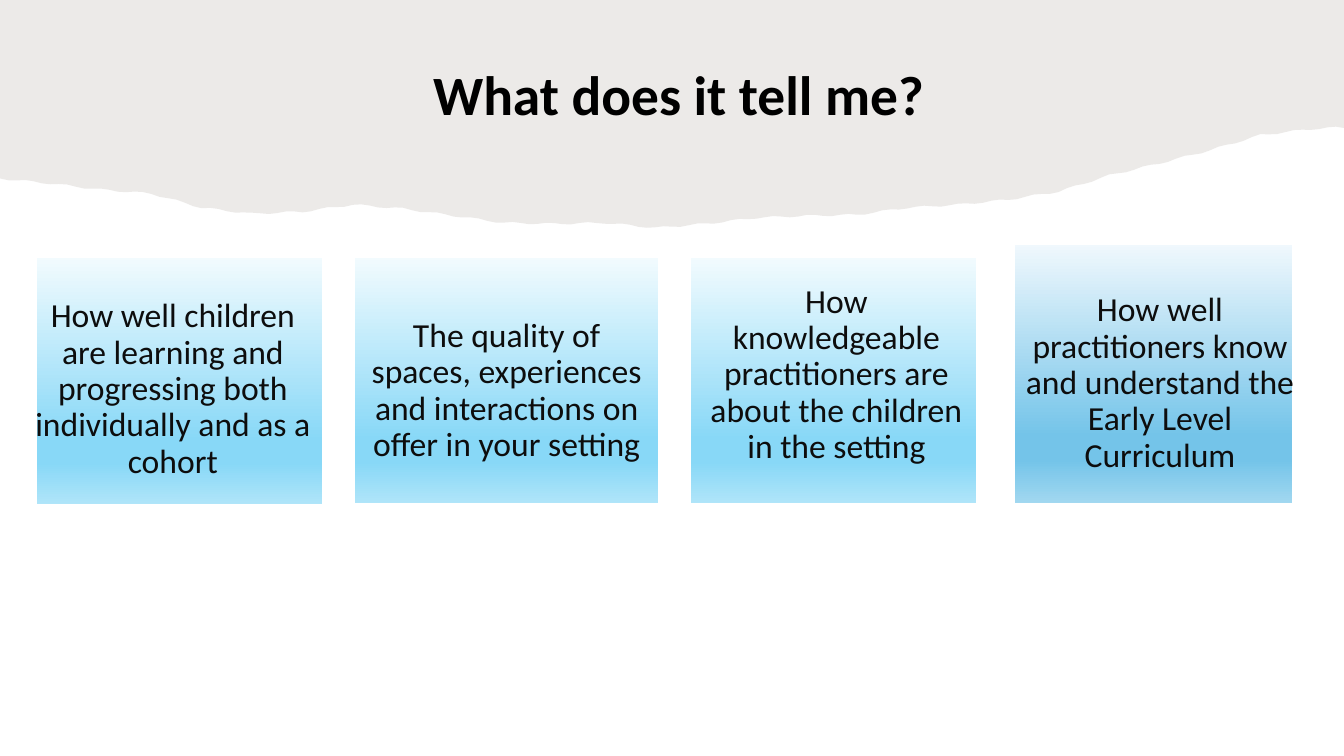
import math

import pptx
import pptx.util
import pptx.dml.color
import pptx.enum.shapes
import pptx.enum.text
import pptx.oxml.ns
from lxml import etree

Inches = pptx.util.Inches
Pt = pptx.util.Pt
RGBColor = pptx.dml.color.RGBColor
ANCHOR = pptx.enum.text.MSO_ANCHOR
qn = pptx.oxml.ns.qn

TAUPE = RGBColor(0x82, 0x76, 0x6A)
BLACK = RGBColor(0x00, 0x00, 0x00)
INK = RGBColor(0x0D, 0x0D, 0x0D)
WHITE = RGBColor(0xFF, 0xFF, 0xFF)
SKY_TOP = RGBColor(0xF2, 0xFB, 0xFE)
SKY_MIDDLE = RGBColor(0x88, 0xD8, 0xF7)
SKY_BOTTOM = RGBColor(0xB0, 0xE5, 0xF9)
BLUE_TOP = RGBColor(0xF0, 0xF8, 0xFD)
BLUE_MIDDLE = RGBColor(0x74, 0xC4, 0xE9)
BLUE_BOTTOM = RGBColor(0xA2, 0xD8, 0xF0)

SLIDE_WIDTH = 13.33
SLIDE_HEIGHT = 7.5


def add_text(place, words, inset, anchor, color, font_format):
    box = slide.shapes.add_textbox(*map(Inches, place))
    frame = box.text_frame
    frame.word_wrap = True
    frame.vertical_anchor = anchor
    for side in ("left", "right", "top", "bottom"):
        setattr(frame, f"margin_{side}", Inches(inset))
    paragraph = frame.paragraphs[0]
    paragraph.alignment = pptx.enum.text.PP_ALIGN.CENTER
    paragraph.line_spacing = 0.9
    run = paragraph.add_run()
    run.text = words
    run.font.color.rgb = color
    for name, value in font_format.items():
        setattr(run.font, name, value)


presentation = pptx.Presentation()
presentation.slide_width = Inches(SLIDE_WIDTH)
presentation.slide_height = Inches(SLIDE_HEIGHT)
slide = presentation.slides.add_slide(presentation.slide_layouts[6])

EDGE_SPACING = 0.5
TEARS_PER_SPACING = 6
TEAR_DEPTH = 0.01
edge_heights = [
    1.77, 1.82, 1.88, 1.92, 2.06, 2.12, 2.1, 2.03, 2.07, 2.14, 2.21, 2.22, 2.21, 2.26,
    2.22, 2.16, 2.14, 2.13, 2.06, 2.03, 1.98, 1.9, 1.74, 1.62, 1.49, 1.34, 1.28, 1.25,
]
torn_edge = []
for section, (start, end) in enumerate(zip(edge_heights, edge_heights[1:])):
    for tear in range(TEARS_PER_SPACING):
        share = tear / TEARS_PER_SPACING
        across = (section + share) * EDGE_SPACING
        ripple = TEAR_DEPTH * math.sin(17 * across)
        torn_edge.append((Inches(across), Inches(start + (end - start) * share + ripple)))
torn_edge = [point for point in torn_edge if point[0] < Inches(SLIDE_WIDTH)]
torn_edge.append((Inches(SLIDE_WIDTH), Inches(1.27)))

outline = slide.shapes.build_freeform(0, 0)
outline.add_line_segments(torn_edge + [(Inches(SLIDE_WIDTH), 0)], close=True)
banner = outline.convert_to_shape()
banner.shadow.inherit = False
banner.line.fill.background()
banner.fill.solid()
banner.fill.fore_color.rgb = TAUPE
banner_tint = banner.element.spPr.find(qn("a:solidFill")).find(qn("a:srgbClr"))
etree.SubElement(banner_tint, qn("a:alpha"), val="15000")

title_format = {"name": "Calibri", "size": Pt(39.6), "bold": True}
add_text((0.97, 0.78, 11.52, 0.53), "What does it tell me?", 0.05, ANCHOR.BOTTOM,
         BLACK, title_format)

sky_shades = {0: SKY_TOP, 74: SKY_MIDDLE, 83: SKY_MIDDLE, 100: SKY_BOTTOM}
blue_shades = {0: BLUE_TOP, 74: BLUE_MIDDLE, 83: BLUE_MIDDLE, 100: BLUE_BOTTOM}
card_format = {"name": "Calibri", "size": Pt(24)}
cards = [
    {
        "words": "How well children are learning and progressing both individually and as a cohort",
        "panel": (0.36, 2.55, 2.84, 2.46),
        "text_area": (0.2, 2.55, 3.03, 2.63),
        "inset": 0.09,
        "shades": sky_shades,
    },
    {
        "words": "The quality of spaces, experiences and interactions on offer in your setting",
        "panel": (3.51, 2.55, 3.03, 2.45),
        "text_area": (3.51, 2.58, 3.03, 2.6),
        "inset": 0.12,
        "shades": sky_shades,
    },
    {
        "words": "How knowledgeable practitioners are about the children in the setting",
        "panel": (6.84, 2.55, 2.85, 2.45),
        "text_area": (6.87, 2.42, 2.85, 2.6),
        "inset": 0.12,
        "shades": sky_shades,
    },
    {
        "words": "How well practitioners know and understand the Early Level Curriculum",
        "panel": (10.06, 2.42, 2.77, 2.58),
        "text_area": (9.99, 2.1, 3.03, 3.41),
        "inset": 0.13,
        "shades": blue_shades,
    },
]
for card in cards:
    panel = slide.shapes.add_shape(
        pptx.enum.shapes.MSO_SHAPE.RECTANGLE, *map(Inches, card["panel"]))
    panel.shadow.inherit = False
    panel.line.color.rgb = WHITE
    panel.line.width = Pt(1.5)
    panel.fill.gradient()
    panel.fill.gradient_angle = 270
    stops = panel.element.spPr.find(qn("a:gradFill")).find(qn("a:gsLst"))
    stops.clear()
    for percent, shade in card["shades"].items():
        stop = etree.SubElement(stops, qn("a:gs"), pos=str(percent * 1000))
        etree.SubElement(stop, qn("a:srgbClr"), val=str(shade))
    add_text(card["text_area"], card["words"], card["inset"], ANCHOR.MIDDLE,
             INK, card_format)

presentation.save("out.pptx")
